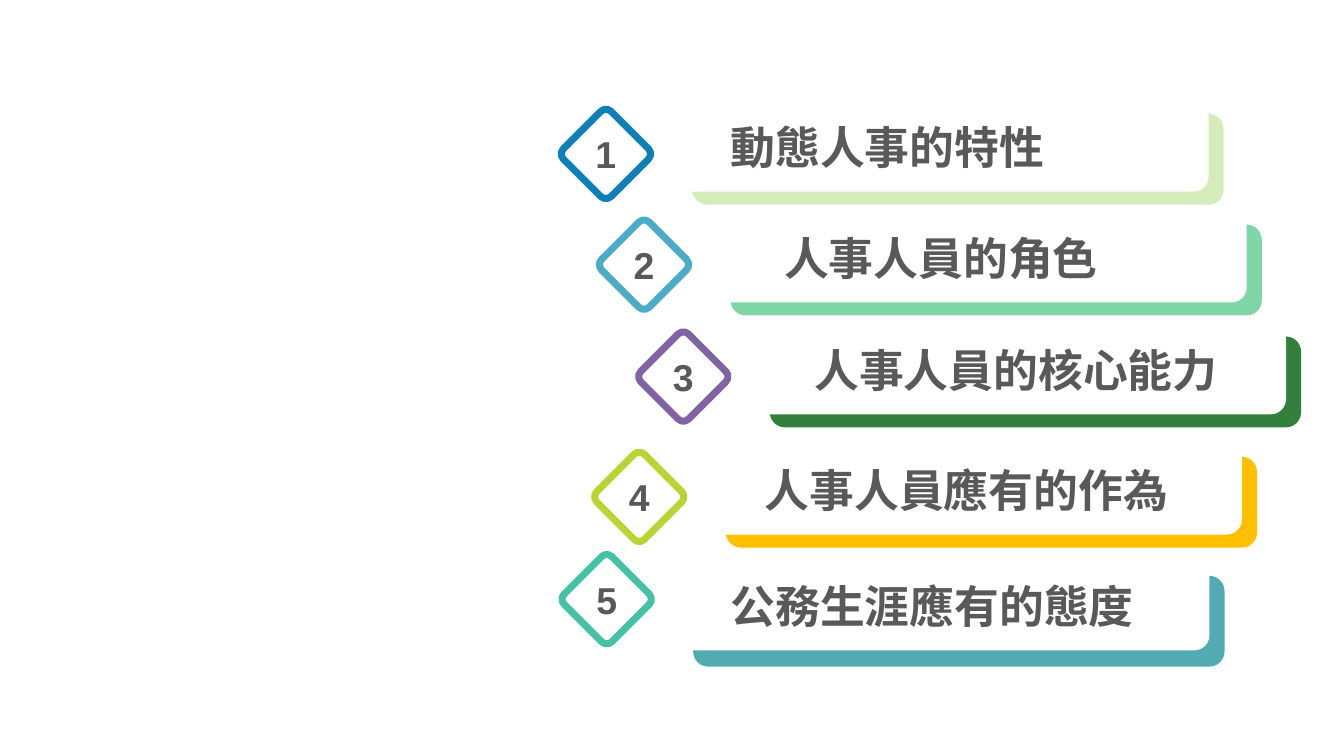
from lxml.etree import SubElement
from pptx import Presentation
from pptx.dml.color import RGBColor
from pptx.enum.shapes import MSO_SHAPE as Geo
from pptx.enum.text import MSO_ANCHOR as Anchor, PP_ALIGN as Align
from pptx.oxml.ns import qn
from pptx.util import Cm, Pt

GREY = "595959"
WHITE = "FFFFFF"
ROWS = [
    ("動態人事的特性", 17.07, 2.54, 18.16, 0.33, 0.49, "92D050", 40, "0E7FB7"),
    ("人事人員的角色", 18.03, 5.33, 19.51, 0.33, 0.49, "00B050", 50, "4BACC6"),
    ("人事人員的核心能力", 19.02, 8.15, 20.27, 0.33, 0.49, "337F3C", 100, "8064A2"),
    ("人事人員應有的作為", 17.91, 11.18, 19.02, 0.33, 0.49, "FFC000", 100, "B9D533"),
    ("公務生涯應有的態度", 17.09, 14.1, 18.16, 0.41, 0.15, "52ABB2", 100, "45C1A4"),
]


def paint(target, color):
    """Give a fill or line fill a solid colour."""
    target.solid()
    target.fore_color.rgb = RGBColor.from_string(color)


def add_box(slide, left, top, wide, high, color, alpha=100):
    """Add a rounded box without outline, opaque by alpha percent."""
    box = slide.shapes.add_shape(
        Geo.ROUNDED_RECTANGLE, Cm(left), Cm(top), Cm(wide), Cm(high))
    box.shadow.inherit = False
    box.line.fill.background()
    paint(box.fill, color)
    if alpha < 100:
        tint = box._element.spPr.find(qn("a:solidFill"))[0]
        SubElement(tint, qn("a:alpha"), val=str(alpha * 1000))
    return box


def add_text(slide, left, top, wide, high, text, size, face, align):
    """Add one bold line of text, centred in height."""
    frame = slide.shapes.add_textbox(
        Cm(left), Cm(top), Cm(wide), Cm(high)).text_frame
    frame.word_wrap = True
    frame.vertical_anchor = Anchor.MIDDLE
    para = frame.paragraphs[0]
    para.text = text
    para.alignment = align
    font = para.font
    font.size = Pt(size)
    font.bold = True
    font.name = face
    paint(font.fill, GREY)
    SubElement(para._p.pPr.find(qn("a:defRPr")), qn("a:ea"), typeface=face)


def add_badge(slide, left, top, color, number):
    """Add a numbered diamond."""
    gem = add_box(slide, left, top, 1.7, 1.7, WHITE)
    gem.rotation = 45
    gem.adjustments[0] = 0.107
    paint(gem.line.fill, color)
    gem.line.width = Pt(5)
    add_text(slide, left + 0.29, top + 0.15, 1.12, 1.4,
             str(number), 26.7, "Arial", Align.CENTER)


def add_row(slide, number, row):
    """Add one agenda row: card, edge, badge and label."""
    text, left, top, start, drop, dip, edge, alpha, ring = row
    add_box(slide, left + 0.38, top + drop, 13.39, 2.29, edge, alpha)
    add_box(slide, left, top, 13.39, 2.29, WHITE)
    add_badge(slide, left - 2.65, top + dip, ring, number)
    add_text(slide, start, top + 0.34, 11.2, 1.63,
             text, 32, "Noto Sans CJK SC", Align.LEFT)


def main():
    """Build the agenda slide."""
    deck = Presentation()
    deck.slide_width, deck.slide_height = Cm(33.87), Cm(19.05)
    slide = deck.slides.add_slide(deck.slide_layouts[6])
    for number, row in enumerate(ROWS, 1):
        add_row(slide, number, row)
    deck.save("out.pptx")


if __name__ == "__main__":
    main()
